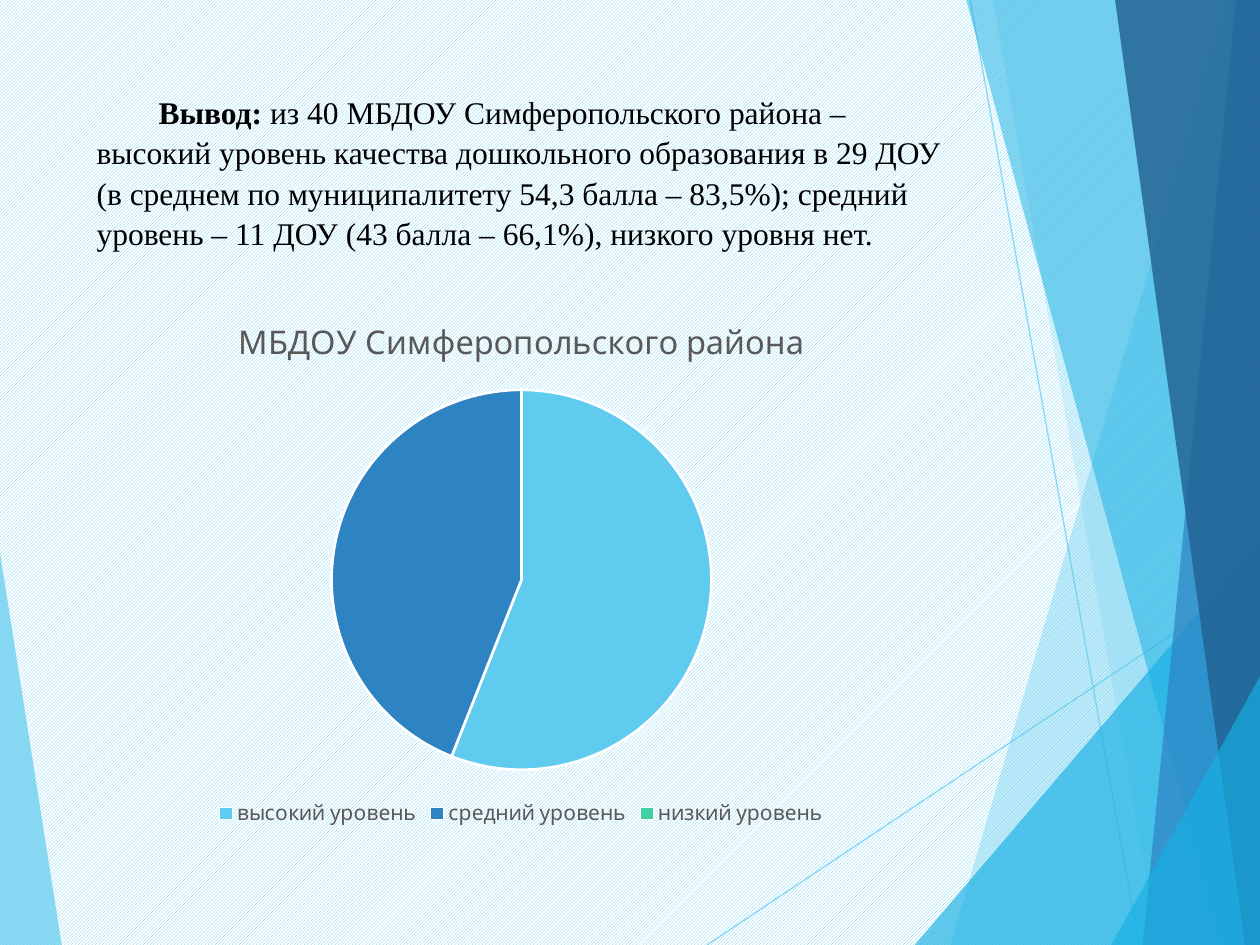
from lxml import etree
from pptx import Presentation
from pptx.chart.data import CategoryChartData
from pptx.dml.color import RGBColor
from pptx.enum.chart import XL_CHART_TYPE, XL_LEGEND_POSITION
from pptx.enum.dml import MSO_PATTERN
from pptx.enum.shapes import MSO_CONNECTOR
from pptx.enum.text import MSO_ANCHOR, MSO_AUTO_SIZE, PP_ALIGN
from pptx.oxml.ns import qn
from pptx.util import Pt

PIE = XL_CHART_TYPE.PIE
BOTTOM = XL_LEGEND_POSITION.BOTTOM
STRAIGHT = MSO_CONNECTOR.STRAIGHT
DIAGONAL = MSO_PATTERN.LIGHT_UPWARD_DIAGONAL
TOP = MSO_ANCHOR.TOP
NO_AUTOFIT = MSO_AUTO_SIZE.NONE
LEFT = PP_ALIGN.LEFT

WIDTH, HEIGHT = 720, 540
SKY, CYAN, BLUE, NAVY, GREEN = "5FCBEF", "17B0E4", "2E83C3", "226292", "42D0A2"
WHITE, BLACK, GRAY = "FFFFFF", "000000", "595959"


def rgb(value):
    return RGBColor.from_string(value)


class Deck:
    """Slide style and one method for each kind of element."""

    body_font = "Times New Roman"
    chart_font = "Karla"

    def __init__(self, prs):
        self.slide = prs.slides.add_slide(prs.slide_layouts[5])
        self.shapes = self.slide.shapes

    def background(self, fore, back):
        fill = self.slide.background.fill
        fill.patterned()
        fill.pattern = DIAGONAL
        fill.fore_color.rgb = rgb(fore)
        fill.back_color.rgb = rgb(back)

    def fade(self, sp, percent):
        color = next(sp._element.spPr.iter(qn("a:srgbClr")))
        etree.SubElement(color, qn("a:alpha"), val=str(percent * 1000))

    def facet(self, points, color, opacity):
        start, *rest = [(Pt(x), Pt(y)) for x, y in points]
        builder = self.shapes.build_freeform(*start)
        builder.add_line_segments(rest, close=True)
        sp = builder.convert_to_shape()
        sp.shadow.inherit = False
        sp.fill.solid()
        sp.fill.fore_color.rgb = rgb(color)
        sp.line.fill.background()
        self.fade(sp, opacity)

    def line(self, x1, y1, x2, y2, color, opacity):
        sp = self.shapes.add_connector(STRAIGHT, Pt(x1), Pt(y1), Pt(x2), Pt(y2))
        sp.line.color.rgb = rgb(color)
        sp.line.width = Pt(0.75)
        self.fade(sp, opacity)
        etree.SubElement(sp._element.spPr, qn("a:effectLst"))

    def title(self, lead, text, x, y, w, h):
        sp = self.shapes.title
        sp.left, sp.top, sp.width, sp.height = Pt(x), Pt(y), Pt(w), Pt(h)
        tf = sp.text_frame
        tf.word_wrap = True
        tf.auto_size = NO_AUTOFIT
        tf.vertical_anchor = TOP
        p = tf.paragraphs[0]
        p.alignment = LEFT
        p.line_spacing = 1.07
        p._p.get_or_add_pPr().set("indent", str(Pt(35.4)))
        for part, bold in ((lead, True), (text, False)):
            r = p.add_run()
            r.text = part
            self.font(r.font, self.body_font, 18, BLACK, bold)

    def font(self, font, name, size, color, bold=False):
        font.name, font.size, font.bold = name, Pt(size), bold
        font.color.rgb = rgb(color)

    def pie(self, name, slices, x, y, w, h):
        data = CategoryChartData()
        data.categories = [label for label, _, _ in slices]
        data.add_series(name, [value for _, value, _ in slices])
        chart = self.shapes.add_chart(PIE, Pt(x), Pt(y), Pt(w), Pt(h), data).chart
        self.font(chart.font, self.chart_font, 10, BLACK)
        chart.has_title = True
        tf = chart.chart_title.text_frame
        tf.text = name
        self.font(tf.paragraphs[0].runs[0].font, self.chart_font, 18.6, GRAY)
        chart.has_legend = True
        chart.legend.position = BOTTOM
        chart.legend.include_in_layout = False
        self.font(chart.legend.font, self.chart_font, 12, GRAY)
        plot = chart.plots[0]
        plot.vary_by_categories = True
        for i, (_, _, color) in enumerate(slices):
            point = plot.series[0].points[i].format
            point.fill.solid()
            point.fill.fore_color.rgb = rgb(color)
            point.line.color.rgb = rgb(WHITE)
            point.line.width = Pt(1.5)


def main():
    prs = Presentation()
    prs.slide_width, prs.slide_height = Pt(WIDTH), Pt(HEIGHT)
    deck = Deck(prs)
    deck.background(SKY, WHITE)

    top_right, bottom_right = (WIDTH, 0), (WIDTH, HEIGHT)
    deck.facet([(0, 316), (35.3, HEIGHT), (0, HEIGHT)], SKY, 70)
    deck.line(404, HEIGHT, WIDTH, 329, SKY, 70)
    deck.line(554.4, 0, 651, HEIGHT, SKY, 70)
    for top, bottom, color, opacity in (
        ((702, 0), 543, SKY, 36),
        ((567.4, 0), 661.7, SKY, 20),
        ((WIDTH, 309), 522.7, CYAN, 66),
        ((552.2, 0), 698.4, CYAN, 50),
        ((706.3, 0), 653, BLUE, 70),
        ((637.2, 0), 711.4, NAVY, 82),
        ((WIDTH, 386.5), 635, CYAN, 66),
    ):
        corners = [top_right, bottom_right] if top[1] == 0 else [bottom_right]
        deck.facet([top, *corners, (bottom, HEIGHT)], color, opacity)

    deck.title(
        "Вывод:\u00a0".replace("\u00a0", " "),
        "из 40 МБДОУ Симферопольского района – высокий уровень качества "
        "дошкольного образования в 29 ДОУ (в среднем по муниципалитету "
        "54,3 балла – 83,5%); средний уровень – 11 ДОУ (43 балла – 66,1%), "
        "низкого уровня нет.",
        48, 48, 500, 104,
    )
    deck.pie(
        "МБДОУ Симферопольского района",
        [
            ("высокий уровень", 56, SKY),
            ("средний уровень", 44, BLUE),
            ("низкий уровень", 0, GREEN),
        ],
        48, 170, 500, 305,
    )
    prs.save("out.pptx")


if __name__ == "__main__":
    main()
